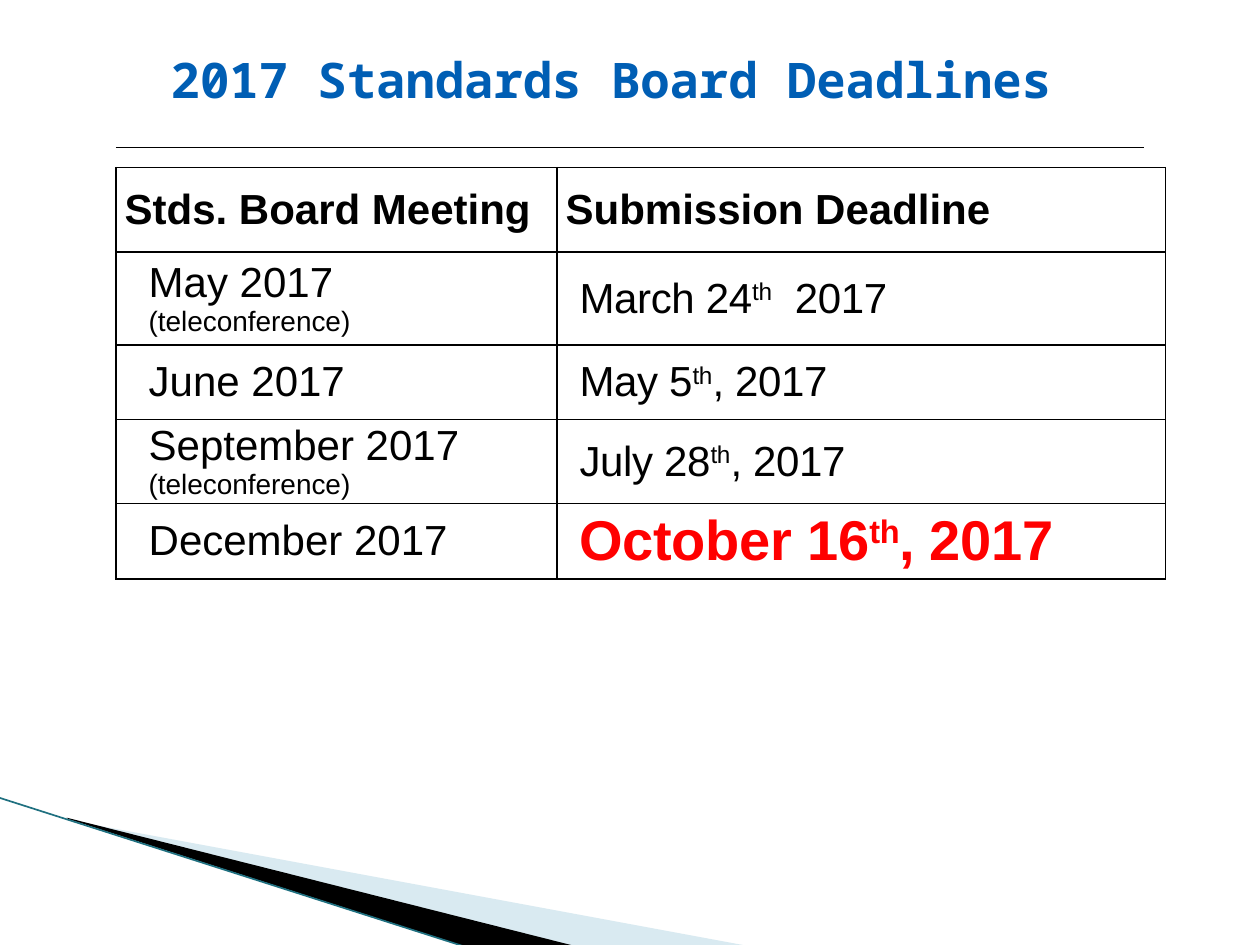
from lxml import etree
from pptx import Presentation
from pptx.dml.color import RGBColor
from pptx.enum.shapes import MSO_CONNECTOR
from pptx.enum.text import MSO_ANCHOR, PP_ALIGN
from pptx.oxml.ns import qn
from pptx.util import Inches, Pt

STRAIGHT = MSO_CONNECTOR.STRAIGHT
MIDDLE = MSO_ANCHOR.MIDDLE
CENTER = PP_ALIGN.CENTER

COLORS = {"title": "005EB4", "text": "000000", "alert": "FF0000",
          "pale": "A0CBDC", "edge": "1F7080", "paper": "FFFFFF"}


def rgb(name):
    return RGBColor.from_string(COLORS[name])


class SlideBuilder:
    title_font = "Noto Sans Mono"
    body_font = "Arial"

    def __init__(self, page):
        self.page = page

    def style(self, font, name, size, color, bold=False):
        font.name, font.size, font.bold = name, Pt(size), bold
        font.color.rgb = rgb(color)

    def wedge(self, points, color, alpha=None):
        corners = [(Inches(x), Inches(y)) for x, y in points]
        builder = self.page.shapes.build_freeform(*corners[0], scale=1.0)
        builder.add_line_segments(corners[1:], close=True)
        shape = builder.convert_to_shape()
        shape.shadow.inherit = False
        shape.fill.solid()
        shape.fill.fore_color.rgb = rgb(color)
        shape.line.fill.background()
        if alpha is not None:
            tone = shape._element.spPr.find(qn("a:solidFill"))[0]
            etree.SubElement(tone, qn("a:alpha"), val=str(alpha * 1000))

    def line(self, start, end, color, width):
        ends = [Inches(value) for value in (*start, *end)]
        rule = self.page.shapes.add_connector(STRAIGHT, *ends)
        rule.line.color.rgb = rgb(color)
        rule.line.width = Pt(width)
        etree.SubElement(rule._element.spPr, qn("a:effectLst"))

    def title(self, text, left, top, width, height):
        box = self.page.shapes.add_textbox(
            Inches(left), Inches(top), Inches(width), Inches(height))
        frame = box.text_frame
        frame.word_wrap = True
        frame.vertical_anchor = MIDDLE
        para = frame.paragraphs[0]
        para.text = text
        para.alignment = CENTER
        self.style(para.font, self.title_font, 28, "title", True)

    def table(self, left, top, widths, heights):
        frame = self.page.shapes.add_table(
            len(heights), len(widths), Inches(left), Inches(top),
            Inches(sum(widths)), Inches(sum(heights)))
        table = frame.table
        table.first_row = table.horz_banding = False
        for column, width in zip(table.columns, widths):
            column.width = Inches(width)
        for row, height in zip(table.rows, heights):
            row.height = Inches(height)
        for cell in table.iter_cells():
            cell.vertical_anchor = MIDDLE
            cell.margin_left = cell.margin_right = Inches(0.07)
            cell.margin_top = cell.margin_bottom = 0
            self.borders(cell)
            cell.fill.background()
        return table

    def borders(self, cell):
        properties = cell._tc.get_or_add_tcPr()
        for side in ("lnL", "lnR", "lnT", "lnB"):
            edge = etree.SubElement(properties, qn("a:" + side), w=str(Pt(1)))
            fill = etree.SubElement(edge, qn("a:solidFill"))
            etree.SubElement(fill, qn("a:srgbClr"), val=COLORS["text"])

    def add_text(self, para, text, size=24, color="text", bold=False, indent=0):
        span = para.add_run()
        span.text = text
        if indent:
            para._p.get_or_add_pPr().set("marL", str(Inches(indent)))
        self.style(para.font, self.body_font, size, color, bold)
        return span

    def meeting(self, cell, month, note, same_para):
        para = cell.text_frame.paragraphs[0]
        self.add_text(para, month, indent=0.19)
        if note and same_para:
            self.add_text(para, note, indent=0.19).font.size = Pt(16)
        elif note:
            self.add_text(cell.text_frame.add_paragraph(), note, 16, indent=0.19)

    def deadline(self, cell, day, year, **look):
        para = cell.text_frame.paragraphs[0]
        para.space_before = para.space_after = Pt(6)
        for text in (day, "th", year):
            span = self.add_text(para, text, indent=0.11, **look)
            properties = span._r.get_or_add_rPr()
            properties.set("spc", "-20")
            if text == "th":
                properties.set("baseline", "30000")


def main():
    deck = Presentation()
    deck.slide_width, deck.slide_height = Inches(10), Inches(7.5)
    page = deck.slides.add_slide(deck.slide_layouts[6])
    page.background.fill.solid()
    page.background.fill.fore_color.rgb = rgb("paper")
    slide = SlideBuilder(page)

    # Corner decoration
    slide.wedge([(0.55, 6.51), (5.95, 7.51), (4.56, 7.51), (0.55, 6.5)],
                "pale", alpha=40)
    slide.wedge([(0.53, 6.49), (4.57, 7.51), (3.72, 7.52), (0.54, 6.5)], "text")
    slide.line((-0.01, 6.33), (3.71, 7.52), "edge", 0.95)

    # Title and rule
    slide.title("2017 Standards Board Deadlines", 0.89, 0.25, 7.92, 0.75)
    slide.line((0.92, 1.17), (9.08, 1.17), "text", 1)

    # Deadline table
    table = slide.table(0.92, 1.33, [3.5, 4.83], [0.67, 0.74, 0.59, 0.62, 0.6])
    for column, heading in enumerate(["Stds. Board Meeting", "Submission Deadline"]):
        para = table.cell(0, column).text_frame.paragraphs[0]
        slide.add_text(para, heading, bold=True)

    note = "(teleconference)"
    alert = {"size": 32, "color": "alert", "bold": True}
    schedule = [
        ("May 2017", note, False, "March 24", "  2017", {}),
        ("June 2017", None, False, "May 5", ", 2017", {}),
        ("September 2017 ", note, True, "July 28", ", 2017", {}),
        ("December 2017", None, False, "October 16", ", 2017", alert),
    ]
    for row, (month, remark, same_para, day, year, look) in enumerate(schedule, 1):
        slide.meeting(table.cell(row, 0), month, remark, same_para)
        slide.deadline(table.cell(row, 1), day, year, **look)

    deck.save("out.pptx")


if __name__ == "__main__":
    main()
